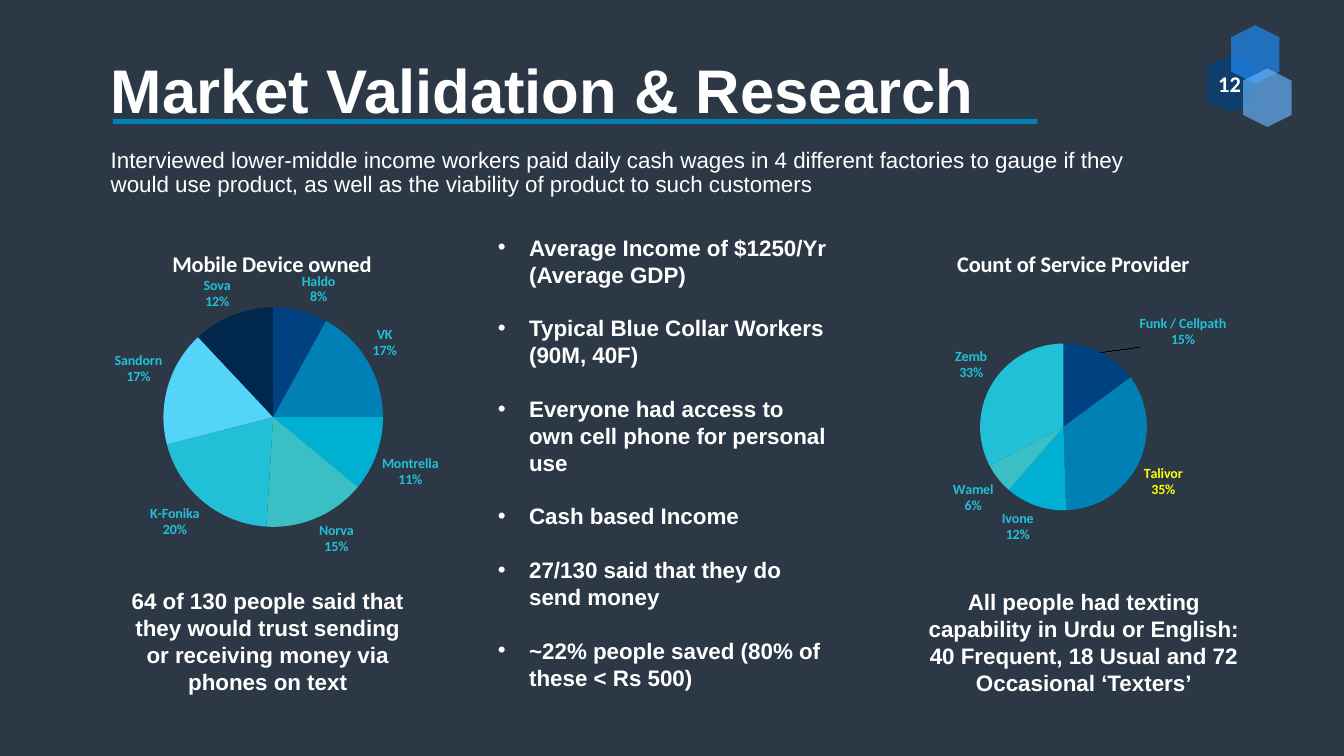
from dataclasses import dataclass

from lxml import etree
from pptx import Presentation
from pptx import util as u
from pptx.chart import data as chart_data
from pptx.dml.color import RGBColor
from pptx.enum import chart as ch, shapes, text
from pptx.oxml import ns


@dataclass(frozen=True)
class Theme:
    background: str = "2D3847"
    white: str = "FFFFFF"
    accent: str = "0080B4"
    label: str = "21C0D7"
    highlight: str = "FFFF00"
    hexagons: tuple = ("004281", "1A8FFF", "67B5FF")
    slices: tuple = ("004281", "0080B4", "00B0D3", "3ABFC4", "21C0D7", "55D4FA", "00284D")
    body_font: str = "Arial"
    chart_font: str = "Calibri"
    title_size: int = 44
    body_size: int = 16
    label_size: int = 10


def set_font(font, name, size, color, bold=False):
    font.name, font.size, font.bold = name, u.Pt(size), bold
    font.color.rgb = RGBColor.from_string(color)


def write(paragraph, words, font, size, color, bold=False, align=None, spacing=None, after=None):
    """Fill a paragraph with one formatted run."""
    run = paragraph.add_run()
    run.text = words
    set_font(run.font, font, size, color, bold)
    paragraph.alignment = align
    paragraph.line_spacing = spacing
    if after is not None:
        paragraph.space_after = u.Pt(after)


def set_layout(parent, after=None, **values):
    """Give a chart part a manual layout, placed after the named child."""
    for old in parent.findall(ns.qn("c:layout")):
        parent.remove(old)
    layout = etree.Element(ns.qn("c:layout"))
    manual = etree.SubElement(layout, ns.qn("c:manualLayout"))
    for tag, value in values.items():
        etree.SubElement(manual, ns.qn("c:" + tag)).set("val", str(value))
    if after:
        parent.find(ns.qn(after)).addnext(layout)
    else:
        parent.insert(0, layout)


def break_label_lines(labels):
    """Put category and percentage on separate lines."""
    separator = etree.Element(ns.qn("c:separator"))
    separator.text = "\n"
    labels.find(ns.qn("c:showBubbleSize")).addnext(separator)


class Deck:
    def __init__(self, theme):
        self.theme = theme
        self.prs = Presentation()
        self.prs.slide_width, self.prs.slide_height = u.Inches(13.33), u.Inches(7.5)
        self.slide = self.prs.slides.add_slide(self.prs.slide_layouts[6])
        fill = self.slide.background.fill
        fill.solid()
        fill.fore_color.rgb = RGBColor.from_string(theme.background)

    def shape(self, kind, box, color, rotation=0, alpha=None):
        item = self.slide.shapes.add_shape(kind, *map(u.Inches, box))
        item.shadow.inherit = False
        item.rotation = rotation
        item.fill.solid()
        item.fill.fore_color.rgb = RGBColor.from_string(color)
        item.line.fill.background()
        if alpha is not None:
            tint = item.fill._xPr.find(".//" + ns.qn("a:srgbClr"))
            etree.SubElement(tint, ns.qn("a:alpha")).set("val", str(alpha * 1000))

    def text(self, box, *lines, bullets=False, anchor=text.MSO_ANCHOR.TOP, **style):
        frame = self.slide.shapes.add_textbox(*map(u.Inches, box)).text_frame
        frame.word_wrap = True
        frame.vertical_anchor = anchor
        look = dict(font=self.theme.body_font, size=self.theme.body_size, color=self.theme.white)
        for i, line in enumerate(lines):
            paragraph = frame.add_paragraph() if i else frame.paragraphs[0]
            write(paragraph, line, **{**look, **style})
            if bullets:
                props = paragraph._p.get_or_add_pPr()
                indent = u.Inches(0.31)
                props.set("marL", str(indent))
                props.set("indent", str(-indent))
                etree.SubElement(props, ns.qn("a:buFont")).set("typeface", "Arial")
                etree.SubElement(props, ns.qn("a:buChar")).set("char", "•")

    def pie(self, box, title, shares, title_at, plot):
        theme = self.theme
        data = chart_data.CategoryChartData()
        data.categories = list(shares)
        data.add_series("Series 1", list(shares.values()))
        chart = self.slide.shapes.add_chart(
            ch.XL_CHART_TYPE.PIE, *map(u.Inches, box), data).chart
        chart.has_legend = False
        set_font(chart.font, theme.chart_font, theme.label_size, theme.white)

        # Title and plot position
        chart.has_title = True
        heading = chart.chart_title
        write(heading.text_frame.paragraphs[0], title, theme.chart_font,
              theme.body_size, theme.white, bold=True)
        set_layout(heading._element, "c:tx", xMode="edge", yMode="edge",
                   x=title_at[0], y=title_at[1])
        set_layout(chart._chartSpace.find(".//" + ns.qn("c:plotArea")),
                   layoutTarget="inner", xMode="edge", yMode="edge",
                   **dict(zip("xywh", plot)))

        # Slices and labels
        chart.plots[0].vary_by_categories = True
        series = chart.plots[0].series[0]
        for i, color in zip(range(len(shares)), theme.slices):
            fill = series.points[i].format.fill
            fill.solid()
            fill.fore_color.rgb = RGBColor.from_string(color)
        labels = series.data_labels
        labels.show_value = False
        labels.show_percentage = labels.show_category_name = True
        labels.number_format, labels.number_format_is_linked = "0%", False
        labels.position = ch.XL_LABEL_POSITION.OUTSIDE_END
        set_font(labels.font, theme.chart_font, theme.label_size, theme.label, bold=True)
        break_label_lines(labels._element)
        return series

    def pie_label(self, series, index, color, shift=None):
        label = series.points[index].data_label
        set_font(label.font, self.theme.chart_font, self.theme.label_size, color, bold=True)
        label.position = ch.XL_LABEL_POSITION.OUTSIDE_END
        element = series._element.xpath(f".//c:dLbl[c:idx/@val='{index}']")[0]
        for tag, shown in (("showVal", 0), ("showCatName", 1), ("showPercent", 1)):
            element.find(ns.qn("c:" + tag)).set("val", str(shown))
        if element.find(ns.qn("c:showBubbleSize")) is not None:
            break_label_lines(element)
        if shift:
            set_layout(element, "c:idx", x=shift[0], y=shift[1])


def main():
    theme = Theme()
    deck = Deck(theme)
    center = text.PP_ALIGN.CENTER

    # Page number on hexagons
    for (left, top), color in zip(((11.92, 0.59), (12.16, 0.3), (12.28, 0.73)), theme.hexagons):
        deck.shape(shapes.MSO_SHAPE.HEXAGON, (left, top, 0.58, 0.48), color, 270, 65)
    deck.text((11.89, 0.65, 0.61, 0.37), "12", font=theme.chart_font, bold=True, align=center)

    # Heading
    deck.text((1, 0.55, 10.71, 0.73), "Market Validation & Research",
              size=theme.title_size, bold=True, spacing=0.9)
    deck.text((1, 1.59, 10.34, 0.26),
              "Interviewed lower-middle income workers paid daily cash wages in 4 different "
              "factories to gauge if they would use product, as well as the viability of "
              "product to such customers", anchor=text.MSO_ANCHOR.MIDDLE, spacing=0.9)
    deck.shape(shapes.MSO_SHAPE.RECTANGLE, (1.12, 1.18, 9.17, 0.05), theme.accent)

    # Findings
    deck.text((4.84, 2.27, 3.53, 4.68),
              "Average Income of $1250/Yr (Average GDP)",
              "Typical Blue Collar Workers (90M, 40F)",
              "Everyone had access to own cell phone for personal use",
              "Cash based Income",
              "27/130 said that they do send money",
              "~22% people saved (80% of these < Rs 500)",
              bullets=True, bold=True, after=19.2)

    # Survey charts
    deck.pie((0.67, 2.27, 4, 3.25), "Mobile Device owned",
             {"Haldo": 8, "VK": 17, "Montrella": 11, "Norva": 15,
              "K-Fonika": 20, "Sandorn": 17, "Sova": 12},
             title_at=(0.25, 0.05), plot=(0.17, 0.24, 0.68, 0.67))
    providers = deck.pie((8.38, 2.27, 4.47, 3.25), "Count of Service Provider",
                         {"Funk / Cellpath": 15, "Talivor": 35, "Ivone": 12,
                          "Wamel": 6, "Zemb": 33},
                         title_at=(0.24, 0.05), plot=(0.3, 0.35, 0.37, 0.51))
    deck.pie_label(providers, 0, theme.label, shift=(0.08, 0))
    deck.pie_label(providers, 1, theme.highlight)

    # Chart conclusions
    deck.text((1.12, 5.78, 3.07, 1.45),
              "64 of 130 people said that they would trust sending or receiving money "
              "via phones on text", bold=True, align=center)
    deck.text((9.03, 5.79, 3.44, 1.45),
              "All people had texting capability in Urdu or English: 40 Frequent, "
              "18 Usual and 72 Occasional ‘Texters’", bold=True, align=center)

    deck.prs.save("out.pptx")


if __name__ == "__main__":
    main()
